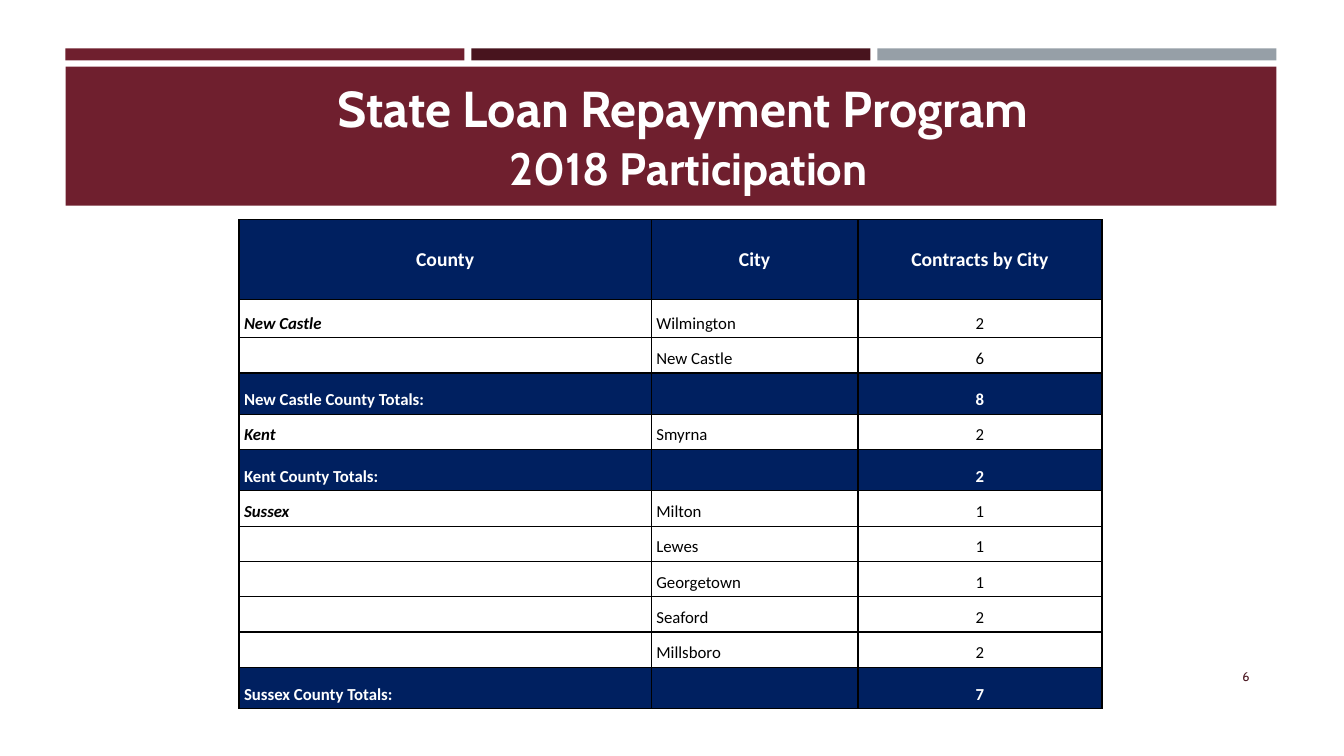
from lxml import etree
from pptx import Presentation
from pptx.dml.color import RGBColor
from pptx.enum.shapes import MSO_SHAPE
from pptx.enum.text import MSO_ANCHOR, MSO_AUTO_SIZE, PP_ALIGN
from pptx.oxml.ns import qn
from pptx.util import Inches, Pt

RECT = MSO_SHAPE.RECTANGLE
MIDDLE, BOTTOM = MSO_ANCHOR.MIDDLE, MSO_ANCHOR.BOTTOM
LEFT, CENTER, RIGHT = PP_ALIGN.LEFT, PP_ALIGN.CENTER, PP_ALIGN.RIGHT
NO_FIT = MSO_AUTO_SIZE.NONE

WINE, DARK, GRAY = "6F1F2E", "48141E", "969FA7"
NAVY, WHITE, BLACK = "002060", "FFFFFF", "000000"

HEADS = ["County", "City", "Contracts by City"]
CITIES = {
    "New Castle": [("Wilmington", 2), ("New Castle", 6)],
    "Kent": [("Smyrna", 2)],
    "Sussex": [("Milton", 1), ("Lewes", 1), ("Georgetown", 1),
               ("Seaford", 2), ("Millsboro", 2)],
}
WIDTHS = [4.09, 2.05, 2.42]


def color(code):
    """Turn a hex string into a colour."""
    return RGBColor.from_string(code)


def style(run, face, size, code, bold=False, italic=False):
    """Format one run."""
    font = run.font
    font.name, font.size = face, Pt(size)
    font.bold, font.italic = bold, italic
    font.color.rgb = color(code)


def add_bar(slide, left, top, width, height, code):
    """Draw a plain filled bar."""
    bar = slide.shapes.add_shape(
        RECT, Inches(left), Inches(top), Inches(width), Inches(height))
    bar.shadow.inherit = False
    bar.fill.solid()
    bar.fill.fore_color.rgb = color(code)
    bar.line.fill.background()


def add_banner(slide, left, top, width):
    """Draw the three strips, the band below them and the title."""
    gap = 0.07
    strip = (width - 2 * gap) / 3
    for i, code in enumerate([WINE, DARK, GRAY]):
        add_bar(slide, left + i * (strip + gap), top, strip, 0.12, code)
    add_bar(slide, left, top + 0.18, width, 1.38, WINE)

    title = slide.shapes.title
    title.left, title.top = Inches(left + 1.81), Inches(top + 0.27)
    title.width, title.height = Inches(8.74), Inches(1.18)
    slide.shapes._spTree.append(title._element)
    frame = title.text_frame
    frame.text = "State Loan Repayment Program \v2018 Participation"
    frame.auto_size, frame.word_wrap = NO_FIT, True
    frame.vertical_anchor = BOTTOM
    frame.margin_bottom = 0
    para = frame.paragraphs[0]
    para.alignment, para.line_spacing = CENTER, 1.05
    for run, size in zip(para.runs, [36, 32.4]):
        style(run, "Cabin", size, WHITE, bold=True)


def add_edges(cell):
    """Give a cell a thin black line on every side."""
    props = cell._tc.get_or_add_tcPr()
    for side in ["lnL", "lnR", "lnT", "lnB"]:
        line = etree.SubElement(props, qn("a:" + side), w=str(Pt(1)))
        fill = etree.SubElement(line, qn("a:solidFill"))
        etree.SubElement(fill, qn("a:srgbClr"), val=BLACK)


def fill_cell(cell, text, kind, col):
    """Write and format one cell for its kind of row."""
    add_edges(cell)
    cell.margin_left = cell.margin_right = Inches(0.05)
    cell.margin_top = cell.margin_bottom = Inches(0.04)
    head, plain = kind == "head", kind == "city"
    cell.vertical_anchor = MIDDLE if head else BOTTOM
    if plain:
        cell.fill.background()
    else:
        cell.fill.solid()
        cell.fill.fore_color.rgb = color(NAVY)
    cell.text_frame.text = text
    para = cell.text_frame.paragraphs[0]
    para.alignment = CENTER if head or col == 2 else LEFT
    for run in para.runs:
        style(run, "Calibri", 14 if head else 12, BLACK if plain else WHITE,
              bold=not plain or col == 0, italic=plain and col == 0)
    if not text:
        etree.SubElement(para._p, qn("a:endParaRPr"), sz="1200")


def list_rows():
    """List the kind, height and texts of each table row."""
    rows = [("head", 0.79, HEADS)]
    for county, cities in CITIES.items():
        for i, (city, count) in enumerate(cities):
            high = 0.38 if len(rows) == 1 else 0.35
            name = county if i == 0 else ""
            rows.append(("city", high, [name, city, str(count)]))
        total = sum(count for city, count in cities)
        rows.append(("total", 0.41, [county + " County Totals:", "", str(total)]))
    return rows


def add_counts(slide, left, top):
    """Build the table of contracts by county and city."""
    rows = list_rows()
    height = sum(high for kind, high, texts in rows)
    table = slide.shapes.add_table(
        len(rows), len(WIDTHS), Inches(left), Inches(top),
        Inches(sum(WIDTHS)), Inches(height)).table
    table.first_row = table.horz_banding = False
    for col, width in zip(table.columns, WIDTHS):
        col.width = Inches(width)
    for r, (kind, high, texts) in enumerate(rows):
        table.rows[r].height = Inches(high)
        for c, text in enumerate(texts):
            fill_cell(table.cell(r, c), text, kind, c)


def add_number(slide, left, top, width, height):
    """Write the slide number."""
    box = slide.shapes.add_textbox(
        Inches(left), Inches(top), Inches(width), Inches(height))
    frame = box.text_frame
    frame.word_wrap = True
    frame.vertical_anchor = MIDDLE
    frame.text = "6"
    para = frame.paragraphs[0]
    para.alignment = RIGHT
    style(para.runs[0], "Cabin", 9, DARK)


def main():
    """Build and save the slide."""
    deck = Presentation()
    deck.slide_width, deck.slide_height = Inches(13.33), Inches(7.5)
    slide = deck.slides.add_slide(deck.slide_layouts[5])
    add_banner(slide, 0.65, 0.48, 12.01)
    add_number(slide, 11.37, 6.51, 1.12, 0.4)
    add_counts(slide, 2.37, 2.18)
    deck.save("out.pptx")


if __name__ == "__main__":
    main()
